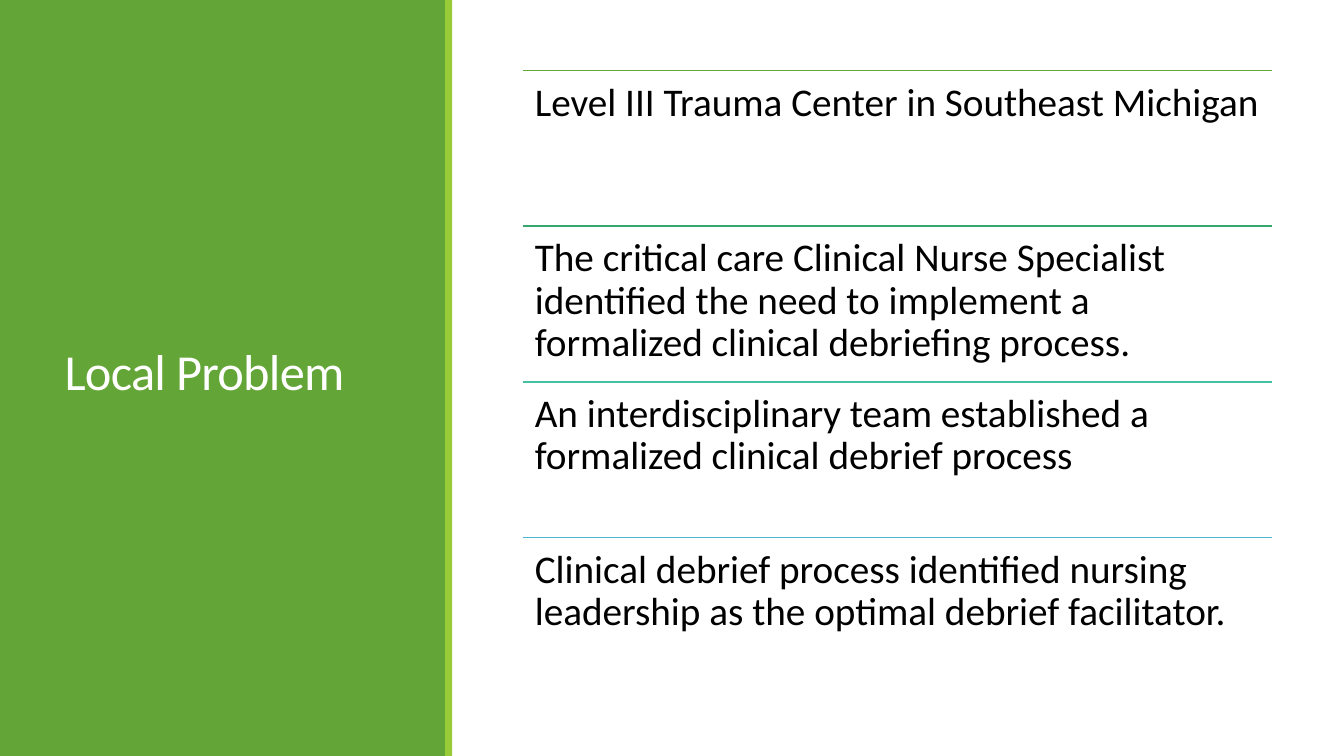
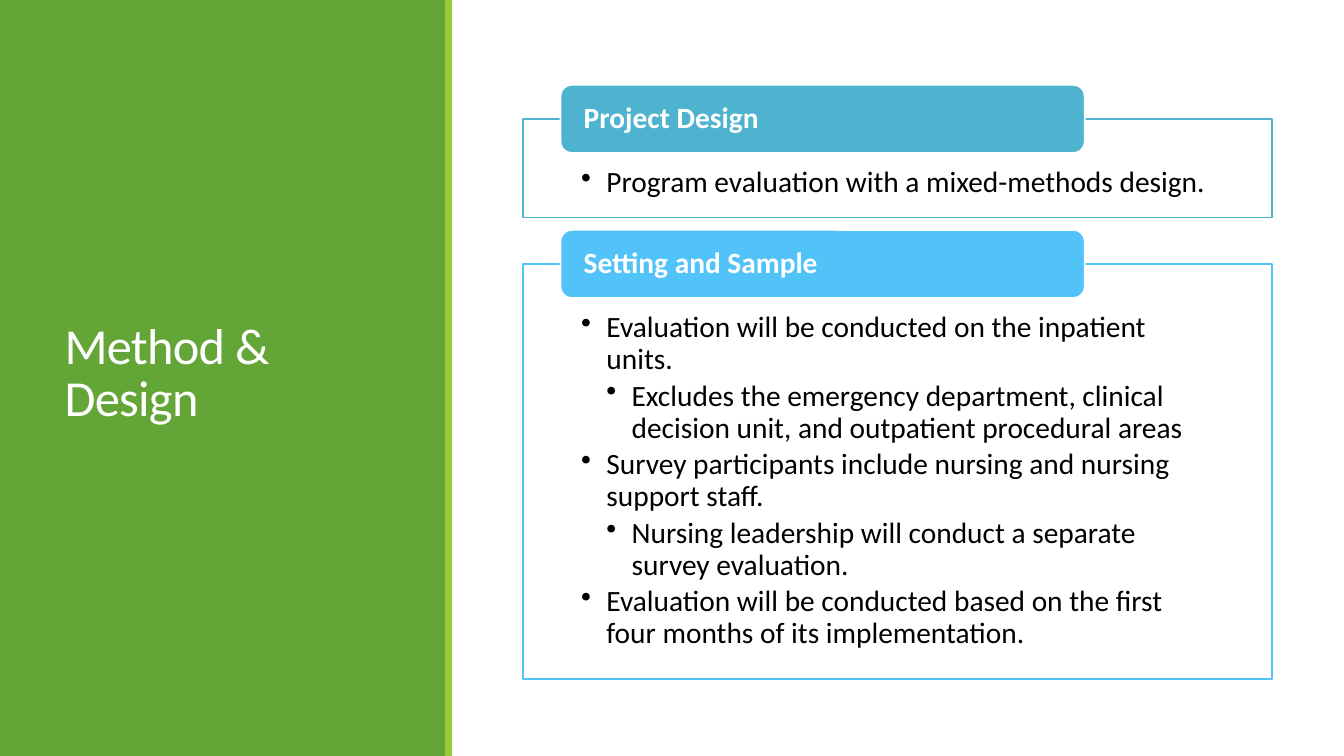
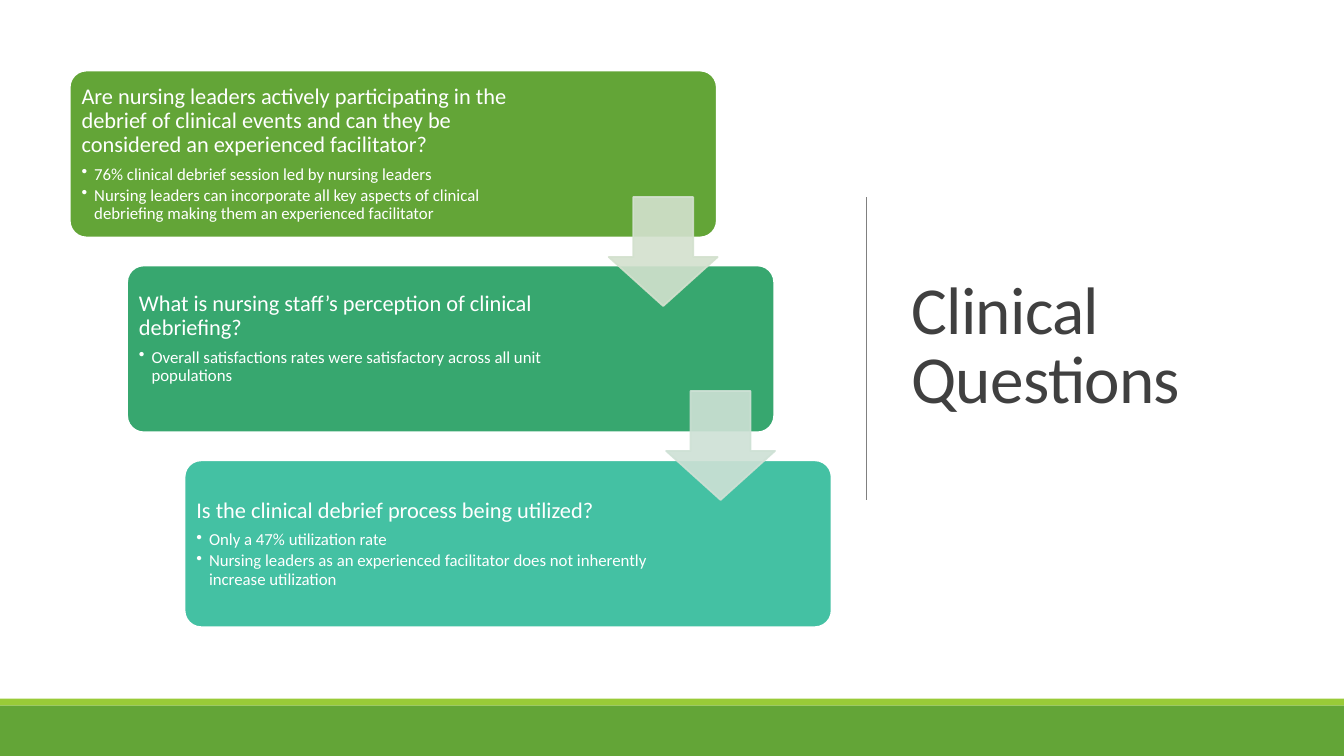
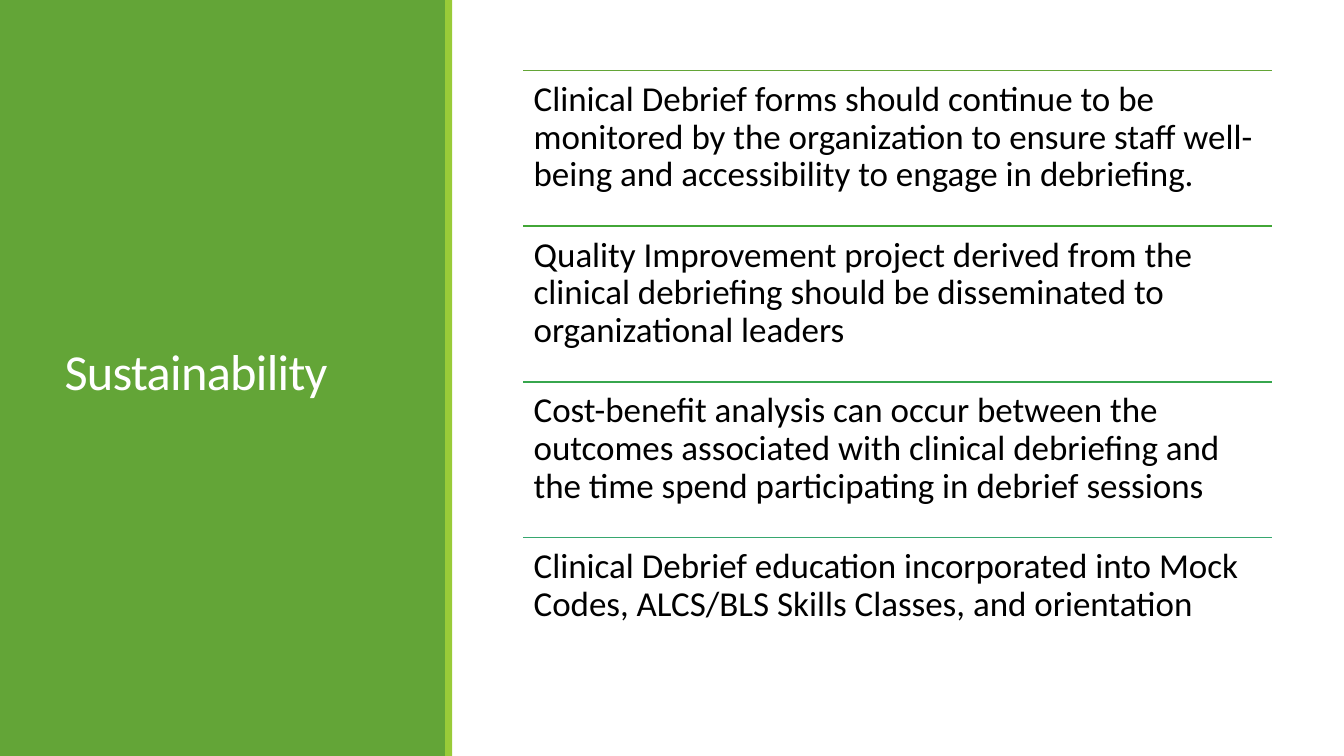
from lxml.etree import SubElement
from pptx import Presentation
from pptx.dml.color import RGBColor
from pptx.enum.shapes import MSO_CONNECTOR as CONNECTOR, MSO_SHAPE as SHAPE
from pptx.enum.text import MSO_ANCHOR as ANCHOR, PP_ALIGN as ALIGN
from pptx.oxml.ns import qn
from pptx.util import Pt

COLORS = {
    "green": "63A537", "lime": "99CB38", "leaf": "42A637", "grass": "37A64D",
    "jade": "37A76F", "teal": "44C1A3", "aqua": "4EB3CF", "sky": "51C3F9",
    "sage": "D3E1CE", "mint": "CEE1D5", "white": "FFFFFF", "black": "000000",
    "charcoal": "404040", "gray": "808080",
}
FONT = "Calibri"
WIDTH, HEIGHT = 960, 540


def draw(slide, kind, box, fill=None, line=None, weight=1.25, adjust=(), opacity=100):
    left, top, width, height = map(Pt, box)
    if isinstance(kind, CONNECTOR):
        shape = slide.shapes.add_connector(kind, left, top, left + width, top + height)
        SubElement(shape._element.spPr, qn("a:effectLst"))
    else:
        shape = slide.shapes.add_shape(kind, left, top, width, height)
        shape.shadow.inherit = False
        shape.fill.solid()
        shape.fill.fore_color.rgb = RGBColor.from_string(COLORS[fill])
    for index, value in enumerate(adjust):
        shape.adjustments[index] = value
    if line:
        shape.line.color.rgb = RGBColor.from_string(COLORS[line])
        shape.line.width = Pt(weight)
    else:
        shape.line.fill.background()
    if opacity < 100:
        for color in shape._element.spPr.iter(qn("a:srgbClr")):
            SubElement(color, qn("a:alpha"), val=str(opacity * 1000))
    return shape


def write(shape, *paragraphs, size, color, insets=(7.2, 3.6, 7.2, 3.6), anchor=ANCHOR.TOP,
          line_spacing=0.9, after=0, bold=False, tracking=0, bullet_size=None,
          bullet_after=0, indent=18):
    frame = shape.text_frame
    frame.word_wrap = True
    frame.vertical_anchor = anchor
    frame.margin_left, frame.margin_top, frame.margin_right, frame.margin_bottom = map(Pt, insets)
    for index, (level, text) in enumerate(paragraphs):
        paragraph = frame.add_paragraph() if index else frame.paragraphs[0]
        paragraph.alignment = ALIGN.LEFT
        paragraph.line_spacing = line_spacing
        paragraph.space_after = Pt(bullet_after if level else after)
        if level:
            properties = paragraph._p.get_or_add_pPr()
            properties.set("marL", str(Pt(indent * level)))
            properties.set("indent", str(-Pt(indent)))
            SubElement(properties, qn("a:buChar"), char="•")
        run = paragraph.add_run()
        run.text = text
        run.font.name = FONT
        run.font.size = Pt(bullet_size if level and bullet_size else size)
        run.font.bold = bold
        run.font.color.rgb = RGBColor.from_string(COLORS[color])
        if tracking:
            run._r.get_or_add_rPr().set("spc", str(int(tracking * 100)))


deck = Presentation()
deck.slide_width, deck.slide_height = Pt(WIDTH), Pt(HEIGHT)
problem, method, questions, sustainability = [
    deck.slides.add_slide(deck.slide_layouts[6]) for _ in range(4)]

title_style = dict(anchor=ANCHOR.MIDDLE, line_spacing=0.85, tracking=-0.5)
for slide, title in (
    (problem, "Local Problem"),
    (method, "Method & Design"),
    (sustainability, "Sustainability"),
):
    draw(slide, SHAPE.RECTANGLE, (0, 0, 319, HEIGHT), fill="green")
    draw(slide, SHAPE.RECTANGLE, (318, 0, 5, HEIGHT), fill="lime")
    heading = slide.shapes.add_textbox(Pt(39), Pt(41), Pt(243), Pt(454))
    write(heading, (0, title), size=36, color="white", **title_style)

content_left, content_width = 373.7, 535
row_top, row_height = 50.4, 111.2
for slide, size, inset, rows in (
    (problem, 28, 8.4, (
        ("green", "Level III Trauma Center in Southeast Michigan"),
        ("jade", "The critical care Clinical Nurse Specialist identified the need to implement a formalized clinical debriefing process."),
        ("teal", "An interdisciplinary team established a formalized clinical debrief process"),
        ("aqua", "Clinical debrief process identified nursing leadership as the optimal debrief facilitator."),
    )),
    (sustainability, 25, 7.5, (
        ("green", "Clinical Debrief forms should continue to be monitored by the organization to ensure staff well-being and accessibility to engage in debriefing."),
        ("leaf", "Quality Improvement project derived from the clinical debriefing should be disseminated to organizational leaders"),
        ("grass", "Cost-benefit analysis can occur between the outcomes associated with clinical debriefing and the time spend participating in debrief sessions"),
        ("jade", "Clinical Debrief education incorporated into Mock Codes, ALCS/BLS Skills Classes, and orientation"),
    )),
):
    for index, (rule_color, statement) in enumerate(rows):
        top = row_top + index * row_height
        draw(slide, CONNECTOR.STRAIGHT, (content_left, top, content_width, 0), line=rule_color)
        row = slide.shapes.add_textbox(Pt(content_left), Pt(top), Pt(content_width), Pt(row_height))
        write(row, (0, statement), size=size, color="black", insets=[inset] * 4)

tab_height, tab_rise = 48.6, 24.4
for top, height, accent, label, details in (
    (85, 70.4, "aqua", "Project Design", (
        (1, "Program evaluation with a mixed-methods design."),
    )),
    (188.6, 296.6, "sky", "Setting and Sample", (
        (1, "Evaluation will be conducted on the inpatient units."),
        (2, "Excludes the emergency department, clinical decision unit, and outpatient procedural areas"),
        (1, "Survey participants include nursing and nursing support staff."),
        (2, "Nursing leadership will conduct a separate survey evaluation."),
        (1, "Evaluation will be conducted based on the first four months of its implementation."),
    )),
):
    panel = draw(method, SHAPE.RECTANGLE, (content_left, top, content_width, height),
                 fill="white", line=accent)
    write(panel, *details, size=21, color="black", insets=(41.5, 34.5, 41.5, 11.5), bullet_after=3.6)
    tab = draw(method, SHAPE.ROUNDED_RECTANGLE, (400.4, top - tab_rise, 374.4, tab_height),
               fill=accent, line="white")
    write(tab, (0, label), size=21, color="white", bold=True, insets=(14.2, 0, 14.2, 0),
          anchor=ANCHOR.MIDDLE)

heading = questions.shapes.add_textbox(Pt(644), Pt(50), Pt(266), Pt(398))
write(heading, (0, "Clinical Questions"), size=48, color="charcoal", **title_style)
draw(questions, CONNECTOR.STRAIGHT, (618.8, 141, 0, 216), line="gray", weight=0.5)
draw(questions, SHAPE.RECTANGLE, (0, 499, WIDTH, 5), fill="lime")
draw(questions, SHAPE.RECTANGLE, (0, 504, WIDTH, 36), fill="green")

step_x, step_y = 41, 139.2
for index, (card_color, bottom_inset, question, findings) in enumerate((
    ("green", 5, "Are nursing leaders actively participating in the debrief of clinical events and can they be considered an experienced facilitator?", (
        "76% clinical debrief session led by nursing leaders",
        "Nursing leaders can incorporate all key aspects of clinical debriefing making them an experienced facilitator",
    )),
    ("jade", 20, "What is nursing staff’s perception of clinical debriefing?", (
        "Overall satisfactions rates were satisfactory across all unit populations",
    )),
    ("teal", 5, "Is the clinical debrief process being utilized?", (
        "Only a 47% utilization rate",
        "Nursing leaders as an experienced facilitator does not inherently increase utilization",
    )),
)):
    card = draw(questions, SHAPE.ROUNDED_RECTANGLE,
                (49.8 + index * step_x, 50.4 + index * step_y, 462.2, 119.2),
                fill=card_color, line="white", adjust=[0.1])
    write(card, (0, question), *[(1, finding) for finding in findings], size=16, color="white",
          insets=(5, 5, 124, bottom_inset), anchor=ANCHOR.MIDDLE, after=6,
          bullet_size=12, bullet_after=2, indent=9)

for index, arrow_color in enumerate(("sage", "mint")):
    draw(questions, SHAPE.DOWN_ARROW, (434.8 + index * step_x, 140.8 + index * 138.5, 77.8, 77.8),
         fill=arrow_color, line=arrow_color, adjust=(0.55, 0.45), opacity=90)

deck.save("out.pptx")
